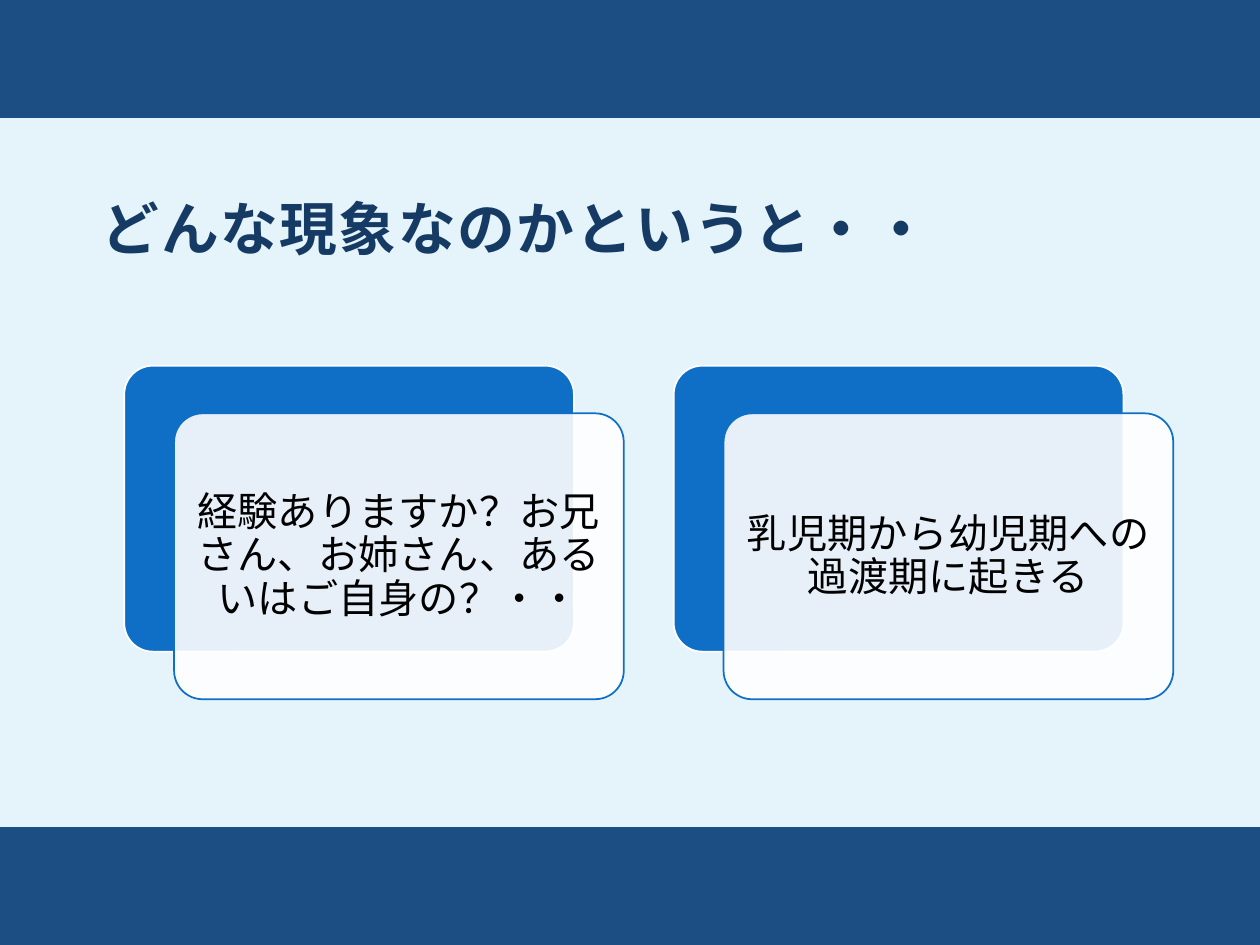
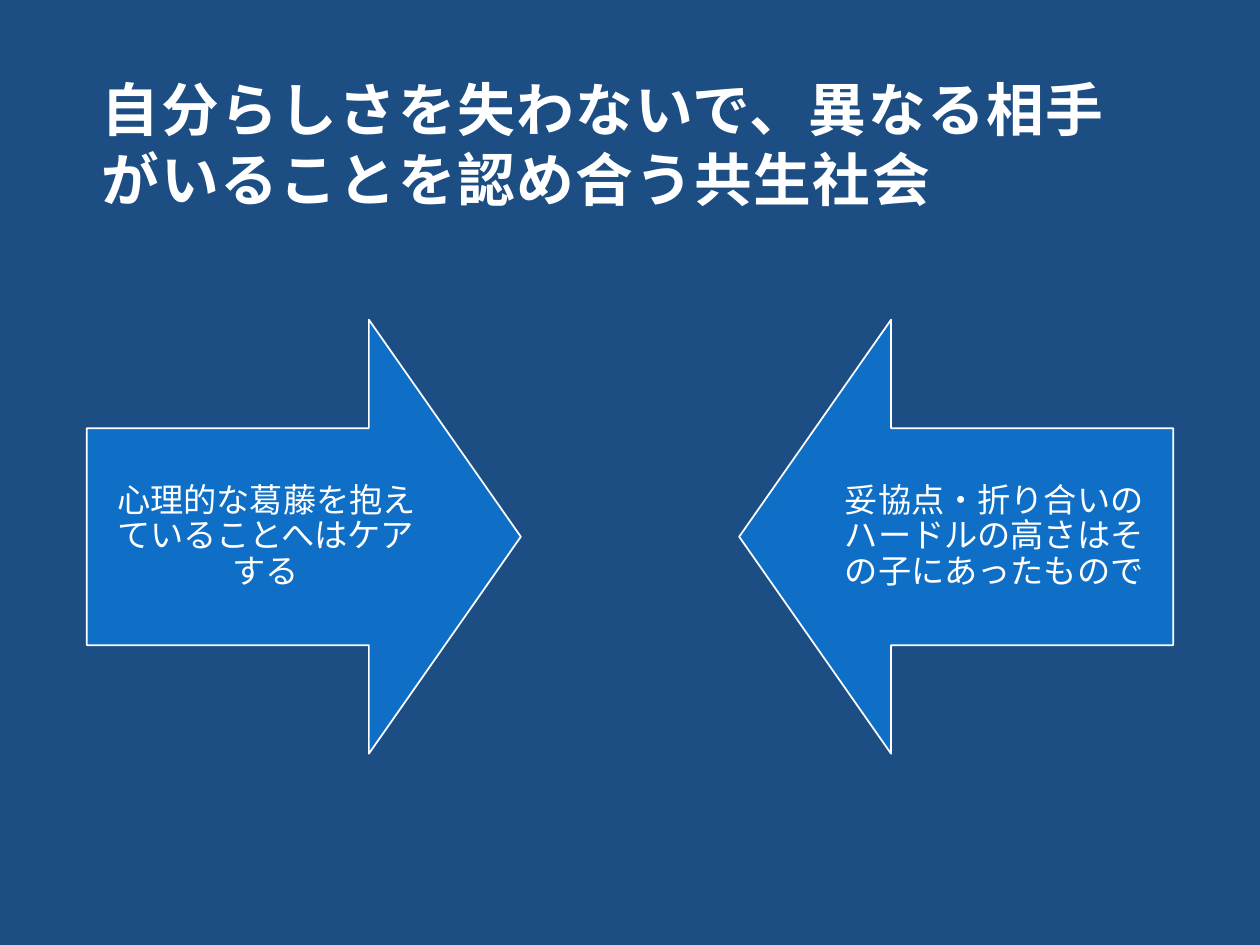
"""Build two slides on a childhood transition and on living together."""
from dataclasses import dataclass

from lxml import etree
from pptx import Presentation
from pptx.dml.color import RGBColor
from pptx.enum import shapes, text
from pptx.oxml import ns
from pptx.util import Pt


@dataclass(frozen=True)
class Theme:
    font: str = "Noto Sans CJK JP"
    navy: str = "1C4D83"
    ink: str = "153A63"
    blue: str = "0F6FC6"
    pale: str = "DBEFF9"
    white: str = "FFFFFF"
    black: str = "000000"
    title_size: float = 33
    card_size: float = 23
    arrow_size: float = 19
    title_leading: float = 1.21
    label_leading: float = 1.08


@dataclass(frozen=True)
class Area:
    left: float
    top: float
    width: float
    height: float

    def lengths(self) -> tuple:
        return tuple(Pt(side) for side in (self.left, self.top, self.width, self.height))

    def moved(self, across: float, down: float) -> "Area":
        return Area(self.left + across, self.top + down, self.width, self.height)

    def shrunk(self, margin: float) -> "Area":
        return Area(self.left + margin, self.top + margin,
                    self.width - 2 * margin, self.height - 2 * margin)


@dataclass(frozen=True)
class Card:
    left: float
    wording: str


@dataclass(frozen=True)
class Arrow:
    kind: shapes.MSO_SHAPE
    left: float
    label_left: float
    wording: str


THEME = Theme()
WIDTH, HEIGHT, SIDE = 720, 540, 49.6
PANEL = Area(0, 67.5, WIDTH, 405)
ARROW_SIDE, LABEL_WIDTH = 248, 204.5
CARDS = (
    Card(71, "経験ありますか？お兄さん、お姉さん、あるいはご自身の？・・"),
    Card(385, "乳児期から幼児期への過渡期に起きる"),
)
ARROWS = (
    Arrow(shapes.MSO_SHAPE.RIGHT_ARROW, SIDE, SIDE,
          "心理的な葛藤を抱えていることへはケアする"),
    Arrow(shapes.MSO_SHAPE.LEFT_ARROW, WIDTH - SIDE - ARROW_SIDE, WIDTH - SIDE - LABEL_WIDTH,
          "妥協点・折り合いのハードルの高さはその子にあったもので"),
)


def add_block(page, kind, area: Area, fill: str, line: str | None = None,
              opacity: int = 100, adjustments: tuple = ()) -> None:
    block = page.shapes.add_shape(kind, *area.lengths())
    block.shadow.inherit = False
    for index, value in enumerate(adjustments):
        block.adjustments[index] = value
    block.fill.solid()
    block.fill.fore_color.rgb = RGBColor.from_string(fill)
    if opacity < 100:
        color = block.fill._xPr.find(".//" + ns.qn("a:srgbClr"))
        etree.SubElement(color, ns.qn("a:alpha")).set("val", str(opacity * 1000))
    if line:
        block.line.color.rgb = RGBColor.from_string(line)
        block.line.width = Pt(1)
    else:
        block.line.fill.background()


def write(box, wording: str, size: float, color: str, leading: float, align, anchor,
          margins: tuple, bold: bool = False, spacing: int = 0) -> None:
    frame = box.text_frame
    frame.text = wording
    frame.word_wrap = True
    frame.auto_size = text.MSO_AUTO_SIZE.NONE
    frame.vertical_anchor = anchor
    (frame.margin_left, frame.margin_top,
     frame.margin_right, frame.margin_bottom) = (Pt(margin) for margin in margins)
    para = frame.paragraphs[0]
    para.alignment = align
    para.line_spacing = Pt(round(size * leading, 1))
    para.space_before = Pt(0)
    span = para.runs[0]
    span.font.name = THEME.font
    span.font.size = Pt(size)
    span.font.bold = bold
    span.font.color.rgb = RGBColor.from_string(color)
    properties = span.font._element
    etree.SubElement(properties, ns.qn("a:ea")).set("typeface", THEME.font)
    if spacing:
        properties.set("spc", str(spacing))


def place_title(page, area: Area, wording: str, color: str, anchor) -> None:
    title = page.shapes.title
    title.left, title.top, title.width, title.height = area.lengths()
    write(title, wording, THEME.title_size, color, THEME.title_leading,
          text.PP_ALIGN.LEFT, anchor, (8.6, 8.6, 8.6, 7.2), bold=True, spacing=90)
    title.element.getparent().append(title.element)


def add_label(page, area: Area, wording: str, size: float, color: str, margin: float) -> None:
    label = page.shapes.add_textbox(*area.lengths())
    write(label, wording, size, color, THEME.label_leading,
          text.PP_ALIGN.CENTER, text.MSO_ANCHOR.MIDDLE, (margin,) * 4)


def add_card(page, card: Card) -> None:
    back = Area(card.left, 209, 257, 163.4)
    front = back.moved(28.5, 27.2)
    rounded = shapes.MSO_SHAPE.ROUNDED_RECTANGLE
    add_block(page, rounded, back, THEME.blue, THEME.white, adjustments=(0.1,))
    add_block(page, rounded, front, THEME.white, THEME.blue, 90, (0.1,))
    add_label(page, front.shrunk(4.8), card.wording, THEME.card_size, THEME.black, 7)


def add_arrow(page, arrow: Arrow) -> None:
    area = Area(arrow.left, 182.7, ARROW_SIDE, ARROW_SIDE)
    add_block(page, arrow.kind, area, THEME.blue, THEME.white, adjustments=(0.5, 0.35))
    label_area = Area(arrow.label_left, area.top + ARROW_SIDE / 4, LABEL_WIDTH, ARROW_SIDE / 2)
    add_label(page, label_area, arrow.wording, THEME.arrow_size, THEME.white, 10.8)


def build_phenomenon(page) -> None:
    for fill, opacity in ((THEME.white, 100), (THEME.pale, 70)):
        add_block(page, shapes.MSO_SHAPE.RECTANGLE, PANEL, fill, opacity=opacity)
    place_title(page, Area(SIDE, 101, 611, 75.6), "どんな現象なのかというと・・",
                THEME.ink, text.MSO_ANCHOR.TOP)
    for card in CARDS:
        add_card(page, card)


def build_coexistence(page) -> None:
    place_title(page, Area(SIDE, 28.8, WIDTH - 2 * SIDE, 104.4),
                "自分らしさを失わないで、異なる相手がいることを認め合う共生社会",
                THEME.white, text.MSO_ANCHOR.MIDDLE)
    for arrow in ARROWS:
        add_arrow(page, arrow)


def main() -> None:
    deck = Presentation()
    deck.slide_width, deck.slide_height = Pt(WIDTH), Pt(HEIGHT)
    backdrop = deck.slide_master.background.fill
    backdrop.solid()
    backdrop.fore_color.rgb = RGBColor.from_string(THEME.navy)
    for build in (build_phenomenon, build_coexistence):
        build(deck.slides.add_slide(deck.slide_layouts[5]))
    deck.save("out.pptx")


if __name__ == "__main__":
    main()
